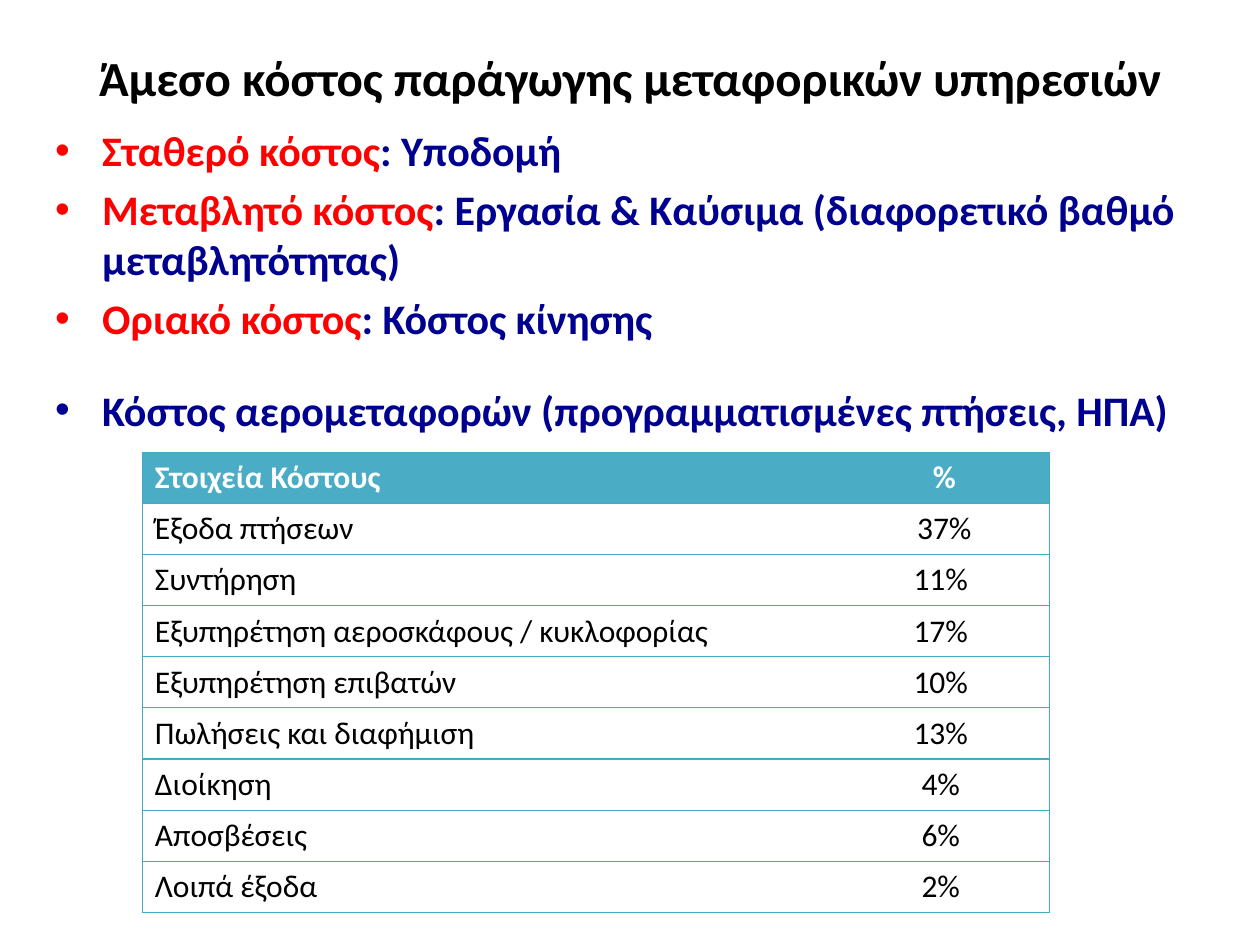
from dataclasses import dataclass

import pptx
import pptx.dml.color
import pptx.enum.text
import pptx.oxml.ns
import pptx.util
from lxml import etree

Cm = pptx.util.Cm
Pt = pptx.util.Pt
Align = pptx.enum.text.PP_ALIGN
Anchor = pptx.enum.text.MSO_ANCHOR


@dataclass(frozen=True)
class Theme:
    font: str = "Calibri"
    black: str = "000000"
    white: str = "FFFFFF"
    red: str = "FF0000"
    navy: str = "000090"
    header: str = "4BACC6"
    border: str = "46AAC5"
    border_width: float = 0.75
    title_size: int = 28
    body_size: int = 24
    table_size: int = 18


THEME = Theme()

TITLE = "Άμεσο κόστος παράγωγης μεταφορικών υπηρεσιών"
COST_TYPES = [
    ("Σταθερό κόστος", ": Υποδομή", 4.8),
    ("Μεταβλητό κόστος", ": Εργασία & Καύσιμα (διαφορετικό βαθμό μεταβλητότητας)", 4.8),
    ("Οριακό κόστος", ": Κόστος κίνησης", 4.8),
    ("", "Κόστος αερομεταφορών (προγραμματισμένες πτήσεις, HΠΑ)", 23.4),
]
COST_SHARES = [
    ("Στοιχεία Κόστους", " %"),
    ("Έξοδα πτήσεων", " 37%"),
    ("Συντήρηση", "11%"),
    ("Εξυπηρέτηση αεροσκάφους / κυκλοφορίας", "17%"),
    ("Εξυπηρέτηση επιβατών", "10%"),
    ("Πωλήσεις και διαφήμιση", "13%"),
    ("Διοίκηση", "4%"),
    ("Αποσβέσεις", "6%"),
    ("Λοιπά έξοδα", "2%"),
]


def rgb(color):
    return pptx.dml.color.RGBColor.from_string(color)


def add_text(paragraph, text, *, size, color, bold=False, align=Align.LEFT):
    paragraph.alignment = align
    run = paragraph.add_run()
    run.text = text
    run.font.name = THEME.font
    run.font.size = Pt(size)
    run.font.bold = bold
    run.font.color.rgb = rgb(color)


def add_child(parent, tag, **attributes):
    return etree.SubElement(parent, pptx.oxml.ns.qn(tag), attributes)


def add_bullet(paragraph, indent, color):
    properties = paragraph._p.get_or_add_pPr()
    properties.set("marL", str(indent))
    properties.set("indent", str(-indent))
    bullet_color = add_child(properties, "a:buClr")
    add_child(bullet_color, "a:srgbClr", val=color)
    add_child(properties, "a:buFont", typeface="Arial")
    add_child(properties, "a:buChar", char="•")


def set_borders(cell, sides):
    properties = cell._tc.get_or_add_tcPr()
    for side in "LRTB":
        line = add_child(properties, f"a:ln{side}", w=str(Pt(THEME.border_width)))
        if side in sides:
            fill = add_child(line, "a:solidFill")
            add_child(fill, "a:srgbClr", val=THEME.border)
        else:
            add_child(line, "a:noFill")


def add_text_frame(slide, box, anchor):
    frame = slide.shapes.add_textbox(*box).text_frame
    frame.word_wrap = True
    frame.vertical_anchor = anchor
    return frame


def add_title(slide, box):
    frame = add_text_frame(slide, box, Anchor.MIDDLE)
    add_text(frame.paragraphs[0], TITLE, size=THEME.title_size,
             color=THEME.black, bold=True, align=Align.CENTER)


def add_cost_types(slide, box):
    frame = add_text_frame(slide, box, Anchor.TOP)
    for index, (term, detail, space) in enumerate(COST_TYPES):
        paragraph = frame.add_paragraph() if index else frame.paragraphs[0]
        paragraph.space_before = Pt(space)
        add_bullet(paragraph, Cm(0.95), THEME.red if term else THEME.navy)
        for text, color in ((term, THEME.red), (detail, THEME.navy)):
            if text:
                add_text(paragraph, text, size=THEME.body_size, color=color, bold=True)


def add_cost_table(slide, box):
    width = box[2]
    table = slide.shapes.add_table(len(COST_SHARES), 2, *box).table
    table.horz_banding = False
    table.columns[0].width = int(width * 0.76)
    table.columns[1].width = width - table.columns[0].width
    for row, values in enumerate(COST_SHARES):
        is_header = row == 0
        for column, value in enumerate(values):
            cell = table.cell(row, column)
            set_borders(cell, "RTB" if column else "LTB")
            cell.fill.solid()
            cell.fill.fore_color.rgb = rgb(THEME.header if is_header else THEME.white)
            add_text(cell.text_frame.paragraphs[0], value, size=THEME.table_size,
                     color=THEME.white if is_header else THEME.black, bold=is_header,
                     align=Align.CENTER if column else Align.LEFT)


def main():
    presentation = pptx.Presentation()
    presentation.slide_width = Cm(25.4)
    presentation.slide_height = Cm(19.05)
    slide = presentation.slides.add_slide(presentation.slide_layouts[6])
    add_title(slide, (Cm(1.27), Cm(0.76), Cm(22.86), Cm(1.6)))
    add_cost_types(slide, (Cm(0.86), Cm(2.39), Cm(23.27), Cm(5.11)))
    add_cost_table(slide, (Cm(2.87), Cm(9.12), Cm(18.29), Cm(9.27)))
    presentation.save("out.pptx")


if __name__ == "__main__":
    main()
